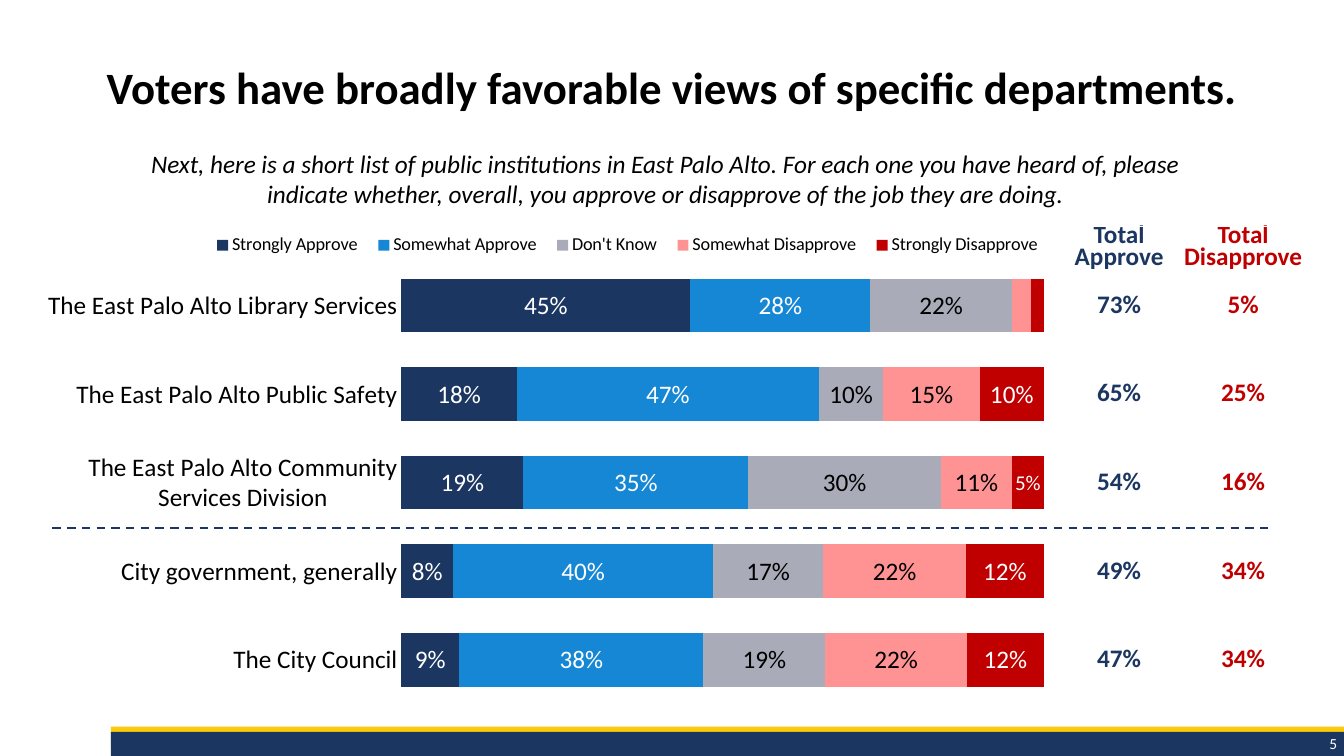
from dataclasses import dataclass
from typing import Any

import lxml.etree
import pptx
import pptx.chart.data
import pptx.dml.color
import pptx.enum.chart
import pptx.enum.dml
import pptx.enum.shapes
import pptx.enum.text
import pptx.oxml
import pptx.oxml.ns
import pptx.util

Inches = pptx.util.Inches
Pt = pptx.util.Pt
CENTER = pptx.enum.text.PP_ALIGN.CENTER
RIGHT = pptx.enum.text.PP_ALIGN.RIGHT
MIDDLE = pptx.enum.text.MSO_ANCHOR.MIDDLE
NAVY, RED, BLACK, WHITE = "1B3660", "C00000", "000000", "FFFFFF"


@dataclass
class Answer:
    name: str
    values: list[float]
    color: str
    label_color: str
    unlabelled: tuple[int, ...] = ()


@dataclass
class Band:
    top: float
    height: float
    color: str


DEPARTMENTS = [
    "The East Palo Alto Library Services",
    "The East Palo Alto Public Safety",
    "The East Palo Alto Community Services Division",
    "City government, generally",
    "The City Council",
]
ANSWERS = [
    Answer("Strongly Approve", [0.45, 0.18, 0.19, 0.08, 0.09], NAVY, WHITE),
    Answer("Somewhat Approve", [0.28, 0.47, 0.35, 0.4, 0.38], "1587D4", WHITE),
    Answer("Don't Know", [0.22, 0.1, 0.3, 0.17, 0.19], "A9ABB8", BLACK),
    Answer("Somewhat Disapprove", [0.03, 0.15, 0.11, 0.22, 0.22], "FF9393", BLACK, (0,)),
    Answer("Strongly Disapprove", [0.02, 0.1, 0.05, 0.12, 0.12], RED, WHITE, (0,)),
]
TOTALS = [
    ("Total Approve", "Total Disapprove"),
    ("73%", "5%"),
    ("65%", "25%"),
    ("54%", "16%"),
    ("49%", "34%"),
    ("47%", "34%"),
]
BANDS = [Band(7.21, 0.2, "FCCA09"), Band(7.26, 0.24, "1B3661")]


def rgb(color: str) -> pptx.dml.color.RGBColor:
    return pptx.dml.color.RGBColor.from_string(color)


def apply_format(target: Any, values: dict[str, Any]) -> None:
    for name, value in values.items():
        setattr(target, name, value)


def format_font(font: Any, size: float, color: str, **styles: bool) -> None:
    apply_format(font, {"name": "Calibri", "size": Pt(size), **styles})
    font.color.rgb = rgb(color)


def set_layout(parent: Any, position: int, inner: bool, **fractions: float) -> None:
    """Place a chart part by fractions (x, y, w, h) of the chart's size."""
    for layout in parent.findall(pptx.oxml.ns.qn("c:layout")):
        parent.remove(layout)
    settings = {"layoutTarget": "inner"} if inner else {}
    settings |= {"xMode": "edge", "yMode": "edge", **fractions}
    items = "".join(f'<c:{name} val="{value}"/>' for name, value in settings.items())
    parent.insert(position, pptx.oxml.parse_xml(
        f'<c:layout {pptx.oxml.ns.nsdecls("c")}><c:manualLayout>{items}'
        "</c:manualLayout></c:layout>"))


def add_text(slide: Any, box: tuple[float, ...], text: str, alignment: Any,
             size: float, color: str, **styles: bool) -> Any:
    shape = slide.shapes.add_textbox(*map(Inches, box))
    shape.text_frame.word_wrap = True
    paragraph = shape.text_frame.paragraphs[0]
    paragraph.text = text
    paragraph.alignment = alignment
    for run in paragraph.runs:
        format_font(run.font, size, color, **styles)
    return shape


def add_footer(slide: Any) -> None:
    for band in BANDS:
        shape = slide.shapes.add_shape(
            pptx.enum.shapes.MSO_SHAPE.RECTANGLE,
            Inches(1.1), Inches(band.top), Inches(12.23), Inches(band.height))
        shape.shadow.inherit = False
        shape.fill.solid()
        shape.fill.fore_color.rgb = rgb(band.color)
        shape.line.fill.background()
    number = add_text(slide, (11.39, 7.23, 1.97, 0.29), "5", RIGHT, 11, WHITE)
    number.text_frame.vertical_anchor = MIDDLE


def format_answer(series: Any, answer: Answer) -> None:
    series.format.fill.solid()
    series.format.fill.fore_color.rgb = rgb(answer.color)
    labels = series.data_labels
    apply_format(labels, {
        "show_value": True, "number_format": "0%", "number_format_is_linked": False,
        "position": pptx.enum.chart.XL_LABEL_POSITION.CENTER})
    format_font(labels.font, 18, answer.label_color)
    for index in answer.unlabelled:
        labels._element.insert(0, pptx.oxml.parse_xml(
            f'<c:dLbl {pptx.oxml.ns.nsdecls("c")}><c:idx val="{index}"/>'
            '<c:delete val="1"/></c:dLbl>'))


def add_approval_chart(slide: Any) -> None:
    data = pptx.chart.data.CategoryChartData(number_format="0%")
    data.categories = DEPARTMENTS
    for answer in ANSWERS:
        data.add_series(answer.name, answer.values)
    chart = slide.shapes.add_chart(
        pptx.enum.chart.XL_CHART_TYPE.BAR_STACKED_100, Inches(0.26), Inches(2.15),
        Inches(10.28), Inches(5.15), data).chart
    format_font(chart.font, 18, BLACK)
    apply_format(chart, {"has_title": False, "has_legend": True})
    apply_format(chart.plots[0], {"gap_width": 65, "overlap": 100, "vary_by_categories": False})
    apply_format(chart.category_axis, {
        "reverse_order": True, "has_major_gridlines": False,
        "major_tick_mark": pptx.enum.chart.XL_TICK_MARK.NONE})
    chart.category_axis.format.line.fill.background()
    apply_format(chart.value_axis, {
        "visible": False, "has_major_gridlines": False,
        "minimum_scale": 0, "maximum_scale": 1, "major_unit": 0.2})
    apply_format(chart.legend, {
        "position": pptx.enum.chart.XL_LEGEND_POSITION.TOP, "include_in_layout": False})
    format_font(chart.legend.font, 13, BLACK)
    for series, answer in zip(chart.plots[0].series, ANSWERS):
        format_answer(series, answer)
    narrow_label = chart.plots[0].series[4].points[2].data_label
    format_font(narrow_label.font, 15, WHITE)
    narrow_label.position = pptx.enum.chart.XL_LABEL_POSITION.CENTER
    plot_area = chart._chartSpace.chart.plotArea
    set_layout(plot_area, 0, True, x=0.362, y=0.086, w=0.62, h=0.853)
    set_layout(chart.legend._element, 1, False, x=0.17, y=0.02, w=0.82, h=0.07)


def add_totals_table(slide: Any) -> None:
    heights = [0.45, 0.47] + [0.88] * 4
    table = slide.shapes.add_table(
        len(TOTALS), 2, Inches(10.54), Inches(2.25), Inches(2.46), Inches(sum(heights))).table
    apply_format(table, {"first_row": False, "horz_banding": False})
    for column, width in zip(table.columns, (1.12, 1.34)):
        column.width = Inches(width)
    for row_index, (row, height, texts) in enumerate(zip(table.rows, heights, TOTALS)):
        row.height = Inches(height)
        for cell, text, color in zip(row.cells, texts, (NAVY, RED)):
            cell.fill.background()
            apply_format(cell, {
                "margin_left": Inches(0.01), "margin_right": Inches(0.01),
                "margin_top": Inches(0.01), "margin_bottom": 0,
                "vertical_anchor": pptx.enum.text.MSO_ANCHOR.BOTTOM})
            paragraph = cell.text_frame.paragraphs[0]
            paragraph.text = text
            paragraph.alignment = CENTER
            if row_index == 0:
                paragraph.line_spacing = Pt(16)
            format_font(paragraph.runs[0].font, 18, color, bold=True)


def add_title(slide: Any) -> None:
    title = slide.shapes.title
    apply_format(title, {"left": Inches(0.33), "top": Inches(0.34),
                         "width": Inches(12.67), "height": Inches(1.11)})
    title.text_frame.text = "Voters have broadly favorable views of specific departments."
    title.text_frame.vertical_anchor = MIDDLE
    paragraph = title.text_frame.paragraphs[0]
    apply_format(paragraph, {"alignment": CENTER, "line_spacing": 0.9})
    format_font(paragraph.runs[0].font, 32, BLACK, bold=True)


def add_divider(slide: Any) -> None:
    divider = slide.shapes.add_connector(
        pptx.enum.shapes.MSO_CONNECTOR.STRAIGHT,
        Inches(0.52), Inches(5.24), Inches(12.59), Inches(5.24))
    divider.line.color.rgb = rgb(NAVY)
    apply_format(divider.line, {
        "width": Pt(1.5), "dash_style": pptx.enum.dml.MSO_LINE.DASH})
    lxml.etree.SubElement(divider._element.spPr, pptx.oxml.ns.qn("a:effectLst"))


def main() -> None:
    presentation = pptx.Presentation()
    apply_format(presentation, {"slide_width": Inches(13.33), "slide_height": Inches(7.5)})
    slide = presentation.slides.add_slide(presentation.slide_layouts[5])
    add_footer(slide)
    add_approval_chart(slide)
    add_totals_table(slide)
    add_title(slide)
    add_text(slide, (0.25, 1.42, 12.76, 0.71),
             "Next, here is a short list of public institutions in East Palo Alto. "
             "For each one you have heard of, please \v"
             "indicate whether, overall, you approve or disapprove of the job they are doing. ",
             CENTER, 18, BLACK, italic=True)
    add_divider(slide)
    presentation.save("out.pptx")


if __name__ == "__main__":
    main()
